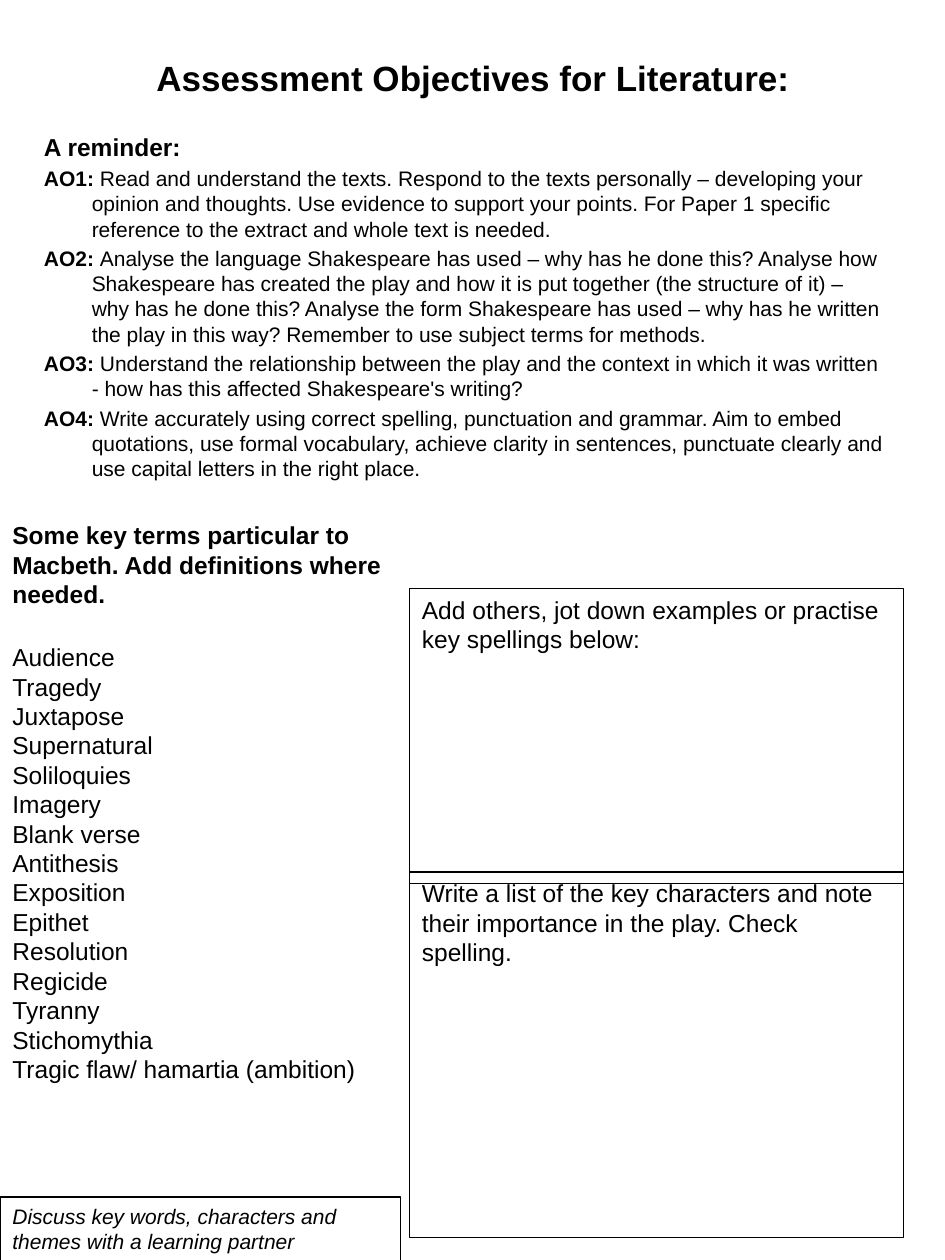
from pptx import Presentation
from pptx.dml.color import RGBColor
from pptx.enum.shapes import MSO_SHAPE
from pptx.enum.text import MSO_ANCHOR, PP_ALIGN
from pptx.util import Inches, Pt

RECT = MSO_SHAPE.RECTANGLE
TOP, MIDDLE = MSO_ANCHOR.TOP, MSO_ANCHOR.MIDDLE
LEFT, CENTER = PP_ALIGN.LEFT, PP_ALIGN.CENTER
BLACK = "000000"

TITLE = "Assessment Objectives for Literature:"
REMINDER = "A reminder:"
GOALS = [
    ("AO1: ", "Read and understand the texts. Respond to the texts personally – "
     "developing your opinion and thoughts. Use evidence to support your points. "
     "For Paper 1 specific reference to the extract and whole text is needed."),
    ("AO2: ", "Analyse the language Shakespeare has used – why has he done this? "
     "Analyse how Shakespeare has created the play and how it is put together "
     "(the structure of it) – why has he done this? Analyse the form Shakespeare "
     "has used – why has he written the play in this way? Remember to use subject "
     "terms for methods."),
    ("AO3: ", "Understand the relationship between the play and the context in which "
     "it was written - how has this affected Shakespeare's writing?"),
    ("AO4: ", "Write accurately using correct spelling, punctuation and grammar. Aim "
     "to embed quotations, use formal vocabulary, achieve clarity in sentences, "
     "punctuate clearly and use capital letters in the right place."),
]
HEADING = "Some key terms particular to Macbeth. Add definitions where needed."
TERMS = ["Audience", "Tragedy", "Juxtapose", "Supernatural", "Soliloquies",
         "Imagery", "Blank verse", "Antithesis", "Exposition", "Epithet",
         "Resolution", "Regicide", "Tyranny", "Stichomythia",
         "Tragic flaw/ hamartia (ambition)"]
# left, top, width, height, text, size, italic
BOXES = [
    (3.25, 4.67, 3.92, 2.34,
     "Add others, jot down examples or practise key spellings below:", 14, False),
    (3.25, 6.92, 3.92, 2.9,
     "Write a list of the key characters and note their importance in the play. "
     "Check spelling.", 14, False),
    (0, 9.5, 3.18, 0.51,
     "Discuss key words, characters and themes with a learning partner", 12, True),
]


def color(code):
    return RGBColor.from_string(code)


def setup(shape, anchor=TOP):
    frame = shape.text_frame
    frame.word_wrap = True
    frame.vertical_anchor = anchor
    return frame


def write(frame, runs, size, bold=None, italic=None, before=0, align=LEFT):
    """Fill the empty first paragraph, or add one, with the given runs."""
    para = frame.paragraphs[0]
    if para.runs:
        para = frame.add_paragraph()
    para.alignment = align
    para.space_before = Pt(before)
    font = para.font
    font.name, font.size = "Arial", Pt(size)
    font.bold, font.italic = bold, italic
    font.color.rgb = color(BLACK)
    for text in runs:
        para.add_run().text = text
    return para


def hang(para, depth=0.38):
    props = para._p.get_or_add_pPr()
    props.set("marL", str(Inches(depth)))
    props.set("indent", str(-Inches(depth)))


deck = Presentation()
deck.slide_width, deck.slide_height = Inches(7.5), Inches(10)
slide = deck.slides.add_slide(deck.slide_layouts[6])
shapes = slide.shapes


def textbox(*area, anchor=TOP):
    return setup(shapes.add_textbox(*map(Inches, area)), anchor)


title = textbox(0.38, 0.4, 6.75, 0.43, anchor=MIDDLE)
write(title, [TITLE], 20, bold=True, align=CENTER)

goals = textbox(0.25, 1, 6.88, 2.83)
hang(write(goals, [REMINDER], 14, bold=True))
for goal in GOALS:
    para = write(goals, goal, 12, before=2.4)
    para.runs[0].font.bold = True
    hang(para)

terms = textbox(0, 4.08, 3.75, 5.99)
write(terms, [HEADING], 14, bold=True)
for i, term in enumerate(TERMS):
    write(terms, [term], 14, before=0 if i else 19.2)

for *area, text, size, italic in BOXES:
    box = shapes.add_shape(RECT, *map(Inches, area))
    box.shadow.inherit = False
    box.fill.background()
    box.line.color.rgb = color(BLACK)
    box.line.width = Pt(0.75)
    write(setup(box), [text], size, italic=italic)

deck.save("out.pptx")
